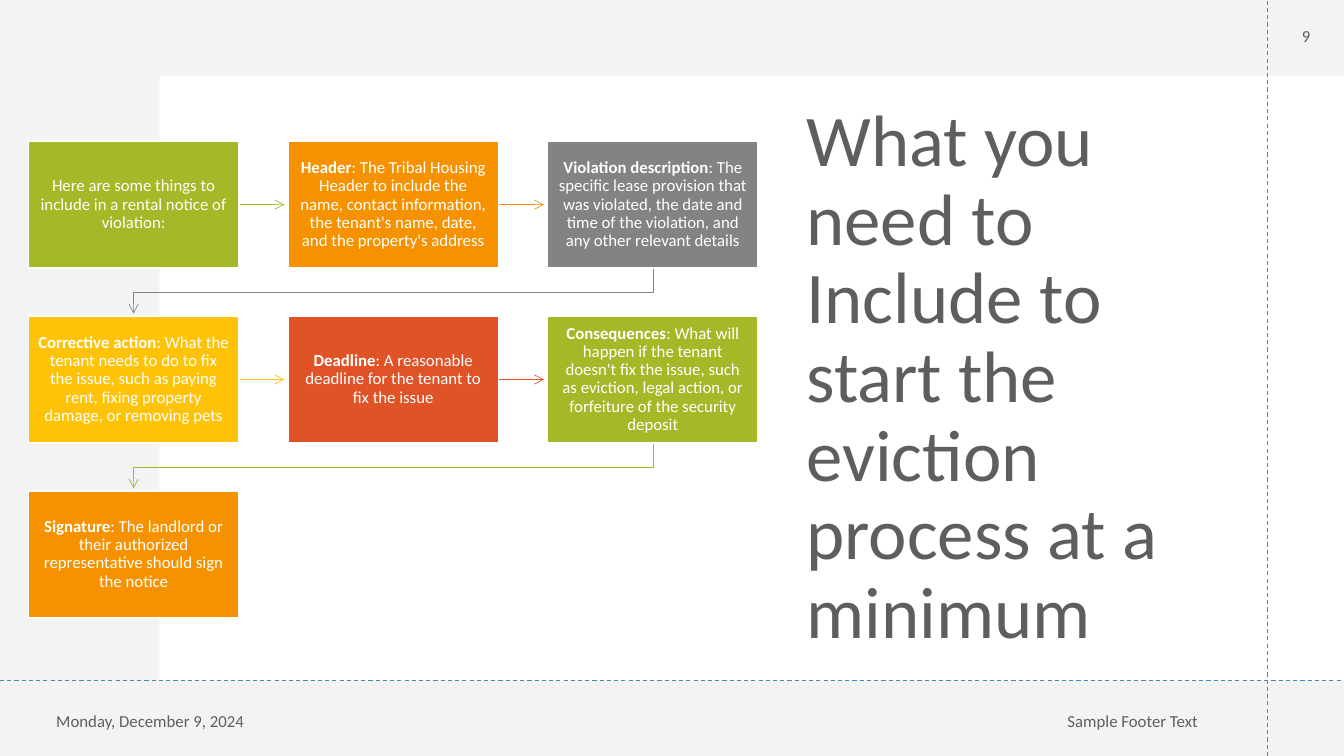
from lxml.etree import SubElement
from pptx import Presentation
from pptx.dml.color import RGBColor
from pptx.enum.dml import MSO_LINE
from pptx.enum.shapes import MSO_CONNECTOR, MSO_SHAPE
from pptx.enum.text import MSO_ANCHOR, PP_ALIGN
from pptx.oxml.ns import qn
from pptx.util import Inches, Pt

FONT = "Calibri"
COLORS = {
    "white": "FFFFFF",
    "backdrop": "F3F3F3",
    "text": "5E5E5E",
    "guide": "418AB3",
    "green": "A6B727",
    "orange": "F69200",
    "gray": "838383",
    "yellow": "FEC306",
    "red": "DF5327",
}

SLIDE_W, SLIDE_H = 13.33, 7.5
GUIDE_X, GUIDE_Y = 12.57, 6.75

COLUMNS = 3
BOX_W, BOX_H = 2.09, 1.26
FLOW_LEFT, FLOW_TOP = 0.28, 1.4
COLUMN_PITCH = (5.43 - FLOW_LEFT) / 2
ROW_PITCH = (4.87 - FLOW_TOP) / 2
ARROW_LENGTH = 0.45

# Fill colour, bold lead-in, remaining text
STEPS = [
    ("green", "", "Here are some things to include in a rental notice of violation:"),
    ("orange", "Header", ": The Tribal Housing Header to include the name, contact "
     "information, the tenant's name, date, and the property's address"),
    ("gray", "Violation description", ": The specific lease provision that was violated, "
     "the date and time of the violation, and any other relevant details"),
    ("yellow", "Corrective action", ": What the tenant needs to do to fix the issue, "
     "such as paying rent, fixing property damage, or removing pets"),
    ("red", "Deadline", ": A reasonable deadline for the tenant to fix the issue"),
    ("green", "Consequences", ": What will happen if the tenant doesn't fix the issue, "
     "such as eviction, legal action, or forfeiture of the security deposit"),
    ("orange", "Signature", ": The landlord or their authorized representative "
     "should sign the notice"),
]


def rgb(color):
    return RGBColor.from_string(COLORS[color])


def style_run(run, size, color, bold=False):
    run.font.name = FONT
    run.font.size = Pt(size)
    run.font.bold = bold
    run.font.color.rgb = rgb(color)


def style_line(line, color, width):
    line.color.rgb = rgb(color)
    line.width = Pt(width)


def add_arrowhead(arrow):
    outline = arrow._element.spPr.find(qn("a:ln"))
    SubElement(outline, qn("a:tailEnd"), type="arrow")


def add_panel(slide, left, top, width, height, color):
    panel = slide.shapes.add_shape(
        MSO_SHAPE.RECTANGLE, Inches(left), Inches(top), Inches(width), Inches(height))
    panel.shadow.inherit = False
    panel.fill.solid()
    panel.fill.fore_color.rgb = rgb(color)
    panel.line.fill.background()
    return panel


def add_label(slide, left, top, width, height, text, align, size=12, spacing=1.0):
    label = slide.shapes.add_textbox(
        Inches(left), Inches(top), Inches(width), Inches(height))
    frame = label.text_frame
    frame.word_wrap = True
    frame.vertical_anchor = MSO_ANCHOR.MIDDLE
    frame.text = text
    paragraph = frame.paragraphs[0]
    paragraph.alignment = align
    paragraph.line_spacing = spacing
    style_run(paragraph.runs[0], size, "text")


def add_line(slide, start, end, color, width):
    line = slide.shapes.add_connector(
        MSO_CONNECTOR.STRAIGHT, *(Inches(value) for value in start + end))
    style_line(line.line, color, width)
    SubElement(line._element.spPr, qn("a:effectLst"))
    return line


def add_guide(slide, start, end):
    guide = add_line(slide, start, end, "guide", 0.75)
    guide.line.dash_style = MSO_LINE.DASH


def add_row_arrow(slide, left, top, color):
    """Arrow from a box to its right-hand neighbour."""
    start_x, y = left + BOX_W, top + BOX_H / 2
    add_arrowhead(add_line(slide, (start_x, y), (start_x + ARROW_LENGTH, y), color, 0.5))


def add_wrap_arrow(slide, left, top, color):
    """Bent arrow from the last box of a row to the first box of the next."""
    start_x, end_x = left + BOX_W / 2, FLOW_LEFT + BOX_W / 2
    start_y = top + BOX_H
    bend_y, end_y = start_y + 0.24, start_y + ARROW_LENGTH
    outline = slide.shapes.build_freeform(Inches(start_x), Inches(start_y))
    bends = [(start_x, bend_y), (end_x, bend_y), (end_x, end_y)]
    outline.add_line_segments([(Inches(x), Inches(y)) for x, y in bends], close=False)
    arrow = outline.convert_to_shape()
    arrow.shadow.inherit = False
    arrow.fill.background()
    style_line(arrow.line, color, 0.5)
    add_arrowhead(arrow)


def add_step(slide, left, top, color, lead, detail):
    box = add_panel(slide, left, top, BOX_W, BOX_H, color)
    style_line(box.line, "white", 1)
    frame = box.text_frame
    frame.word_wrap = True
    frame.vertical_anchor = MSO_ANCHOR.MIDDLE
    frame.margin_left = frame.margin_right = Inches(0.1)
    frame.margin_top = frame.margin_bottom = Inches(0.11)
    paragraph = frame.paragraphs[0]
    paragraph.alignment = PP_ALIGN.CENTER
    paragraph.line_spacing = 0.9
    for text, bold in ((lead, True), (detail, False)):
        if text:
            run = paragraph.add_run()
            run.text = text
            style_run(run, 12, "white", bold)


def add_flow(slide):
    for index, (color, lead, detail) in enumerate(STEPS):
        row, column = divmod(index, COLUMNS)
        left = FLOW_LEFT + column * COLUMN_PITCH
        top = FLOW_TOP + row * ROW_PITCH
        if index < len(STEPS) - 1:
            add_arrow = add_wrap_arrow if column == COLUMNS - 1 else add_row_arrow
            add_arrow(slide, left, top, color)
        add_step(slide, left, top, color, lead, detail)


def main():
    presentation = Presentation()
    presentation.slide_width = Inches(SLIDE_W)
    presentation.slide_height = Inches(SLIDE_H)
    slide = presentation.slides.add_slide(presentation.slide_layouts[6])

    add_panel(slide, 0, 0, SLIDE_W, SLIDE_H, "backdrop")
    add_panel(slide, 1.58, 0.75, 11.75, 6, "white")
    add_label(slide, 7.9, 1.04, 4.58, 5.44,
              "What you need to Include to start the eviction process at a minimum",
              PP_ALIGN.LEFT, size=52, spacing=0.9)
    add_label(slide, 12.58, -0.02, 0.75, 0.75, "9", PP_ALIGN.CENTER)
    add_label(slide, 0.46, 6.8, 3, 0.7, "Monday, December 9, 2024", PP_ALIGN.LEFT)
    add_label(slide, 7.48, 6.8, 4.5, 0.7, "Sample Footer Text", PP_ALIGN.RIGHT)
    add_guide(slide, (GUIDE_X, SLIDE_H), (GUIDE_X, 0))
    add_guide(slide, (0, GUIDE_Y), (SLIDE_W, GUIDE_Y))
    add_flow(slide)

    presentation.save("out.pptx")


if __name__ == "__main__":
    main()
